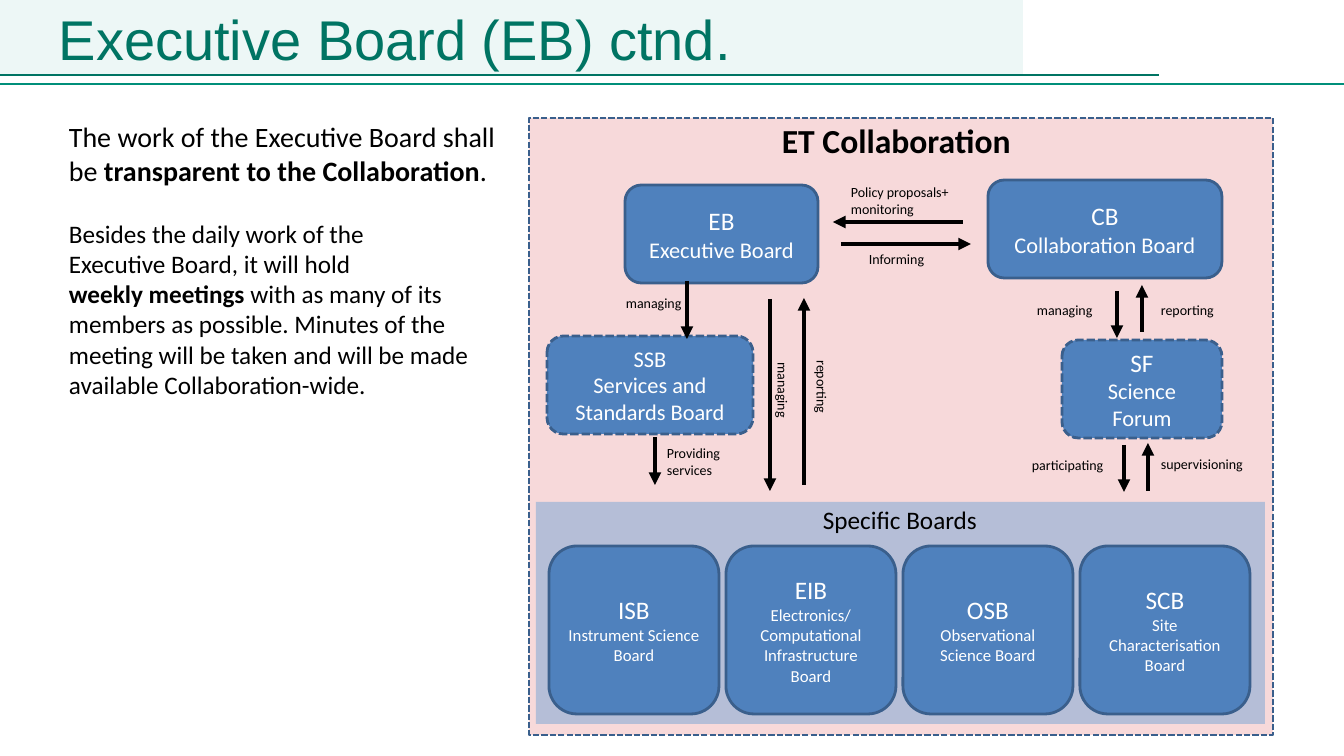
from lxml.etree import SubElement
from pptx import Presentation
from pptx.dml.color import RGBColor
from pptx.enum.dml import MSO_LINE_DASH_STYLE as Dash
from pptx.enum.shapes import MSO_CONNECTOR as Connector, MSO_SHAPE as Shape
from pptx.enum.text import MSO_ANCHOR as Anchor, PP_ALIGN as Align
from pptx.oxml.ns import qn
from pptx.util import Pt

EMU_PER_PX = 914400 / 100.8
COLORS = {
    "band": "EDF7F6", "title": "007463", "rule": "008F7A",
    "collaboration": "CE181E", "specific": "5B9BD5",
    "board": "4F81BD", "border": "3A5F8C", "black": "000000", "white": "FFFFFF",
}


def px(length):
    """Turn pixels into EMU."""
    return round(length * EMU_PER_PX)


def color(name):
    """Look up a named colour."""
    return RGBColor.from_string(COLORS[name])


def write(frame, paragraphs, font="Calibri", ink="black", align=Align.LEFT, spacing=None, gap=0):
    """Fill a frame with (text, size) paragraphs; ** toggles bold and a newline breaks the line."""
    for index, (text, size) in enumerate(paragraphs):
        para = frame.add_paragraph() if index else frame.paragraphs[0]
        para.alignment = align
        if spacing:
            para.line_spacing = spacing
        if index and gap:
            para.space_before = Pt(gap)
        for part, words in enumerate(text.split("**")):
            for row, line in enumerate(words.split("\n")):
                if row:
                    para.add_line_break()
                if line:
                    span = para.add_run()
                    span.text = line
                    span.font.name = font
                    span.font.size = Pt(size)
                    span.font.bold = part % 2 == 1
                    span.font.color.rgb = color(ink)


def add_text(page, bounds, paragraphs, wrap=True, rotation=0, inset=True, anchor=Anchor.TOP, **style):
    """Add a text box."""
    box = page.shapes.add_textbox(*map(px, bounds))
    box.rotation = rotation
    frame = box.text_frame
    frame.word_wrap = wrap
    frame.vertical_anchor = anchor
    if not inset:
        frame.margin_left = frame.margin_right = frame.margin_top = frame.margin_bottom = 0
    write(frame, paragraphs, **style)


def add_panel(page, bounds, fill, kind=Shape.RECTANGLE, alpha=None, border=None, width=2, dash=None):
    """Add a filled shape with an optional border."""
    panel = page.shapes.add_shape(kind, *map(px, bounds))
    panel.shadow.inherit = False
    panel.fill.solid()
    panel.fill.fore_color.rgb = color(fill)
    if alpha:
        tint = panel.fill._xPr.find(qn("a:solidFill"))[0]
        SubElement(tint, qn("a:alpha"), val=str(alpha * 1000))
    if border:
        panel.line.color.rgb = color(border)
        panel.line.width = Pt(width)
        if dash:
            panel.line.dash_style = dash
    else:
        panel.line.fill.background()
    return panel


def add_board(page, bounds, paragraphs, dash=None):
    """Add a rounded board with centred white text."""
    board = add_panel(page, bounds, "board", Shape.ROUNDED_RECTANGLE, border="border", dash=dash)
    board.text_frame.word_wrap = True
    board.text_frame.vertical_anchor = Anchor.MIDDLE
    write(board.text_frame, paragraphs, ink="white", align=Align.CENTER)


def add_line(page, ends, ink="black", width=3, arrow=True):
    """Add a straight line, with an arrowhead at its end by default."""
    line = page.shapes.add_connector(Connector.STRAIGHT, *map(px, ends))
    line.line.color.rgb = color(ink)
    line.line.width = Pt(width)
    if arrow:
        SubElement(line.line._get_or_add_ln(), qn("a:tailEnd"), type="triangle")
    SubElement(line._element.spPr, qn("a:effectLst"))


def add_header(page):
    """Add the title band, its rules and the title."""
    add_panel(page, (0, 0, 1023, 75), "band")
    add_line(page, (0, 75, 1159, 75), "title", 2, arrow=False)
    add_line(page, (0, 84, 1344, 84), "rule", 2, arrow=False)
    add_text(page, (59, 0, 1180, 71), [("Executive Board (EB) ctnd.", 40)], inset=False,
             anchor=Anchor.MIDDLE, font="Arial", ink="title", spacing=1.07)


def add_boards(page):
    """Add the frames and all boards."""
    add_panel(page, (529, 118, 744, 617), "collaboration", alpha=16,
              border="border", width=1.5, dash=Dash.SQUARE_DOT)
    add_panel(page, (536, 502, 729, 222), "specific", alpha=42)
    add_text(page, (772, 115, 252, 50), [("**ET Collaboration**", 24)], wrap=False)
    add_text(page, (813, 499, 176, 40), [("Specific Boards", 18)], wrap=False)
    dashed = Dash.SQUARE_DOT
    for bounds, short, size, name, dash in (
        ((988, 180, 234, 98), "CB", 18, "Collaboration Board", None),
        ((625, 185, 193, 98), "EB", 18, "Executive Board", None),
        ((547, 336, 206, 98), "SSB", 16, "Services and Standards Board", dashed),
        ((1062, 340, 160, 98), "SF", 18, "Science Forum", dashed),
    ):
        add_board(page, bounds, [(short, size), (name, 16)], dash)
    for column, (short, name) in enumerate((
        ("ISB", "Instrument Science Board"),
        ("EIB", "Electronics/\nComputational Infrastructure Board"),
        ("OSB", "Observational Science Board"),
        ("SCB", "Site Characterisation Board"),
    )):
        add_board(page, (549 + 177 * column, 546, 170, 168), [(short, 18), (name, 12)])


def add_relations(page):
    """Add the arrows between boards and their labels."""
    for ends in (
        (963, 222, 833, 222), (841, 244, 971, 244), (687, 281, 687, 339),
        (655, 437, 655, 485), (1117, 291, 1117, 338), (1142, 332, 1142, 285),
        (770, 299, 770, 491), (804, 485, 804, 298),
        (1148, 491, 1148, 443), (1124, 445, 1124, 492),
    ):
        add_line(page, ends)
    add_text(page, (841, 179, 120, 44), [("Policy proposals+", 10), ("monitoring", 10)], wrap=False)
    for left, top, width, height, label, rotation in (
        (859, 246, 88, 27, "Informing", 0),
        (616, 290, 88, 27, "managing", 0),
        (657, 440, 88, 44, "Providing services", 0),
        (1027, 297, 88, 27, "managing", 0),
        (1151, 297, 88, 27, "reporting", 0),
        (737, 385, 92, 27, "managing", 90),
        (776, 383, 92, 27, "reporting", 90),
        (1151, 451, 116, 27, "supervisioning", 0),
        (1022, 452, 116, 27, "participating", 0),
    ):
        add_text(page, (left, top, width, height), [(label, 10)], rotation=rotation)


def main():
    """Build the slide and save it."""
    deck = Presentation()
    deck.slide_width, deck.slide_height = px(1344), px(756)
    page = deck.slides.add_slide(deck.slide_layouts[6])
    add_header(page)
    add_text(page, (59, 115, 452, 353), [
        ("The work of the Executive Board shall be **transparent to the Collaboration**.", 20),
        ("Besides the daily work of the\nExecutive Board, it will hold\n**weekly meetings** with as many "
         "of its members as possible. Minutes of the meeting will be taken and will be made "
         "available Collaboration-wide.", 18),
    ], gap=22)
    add_boards(page)
    add_relations(page)
    deck.save("out.pptx")


if __name__ == "__main__":
    main()
